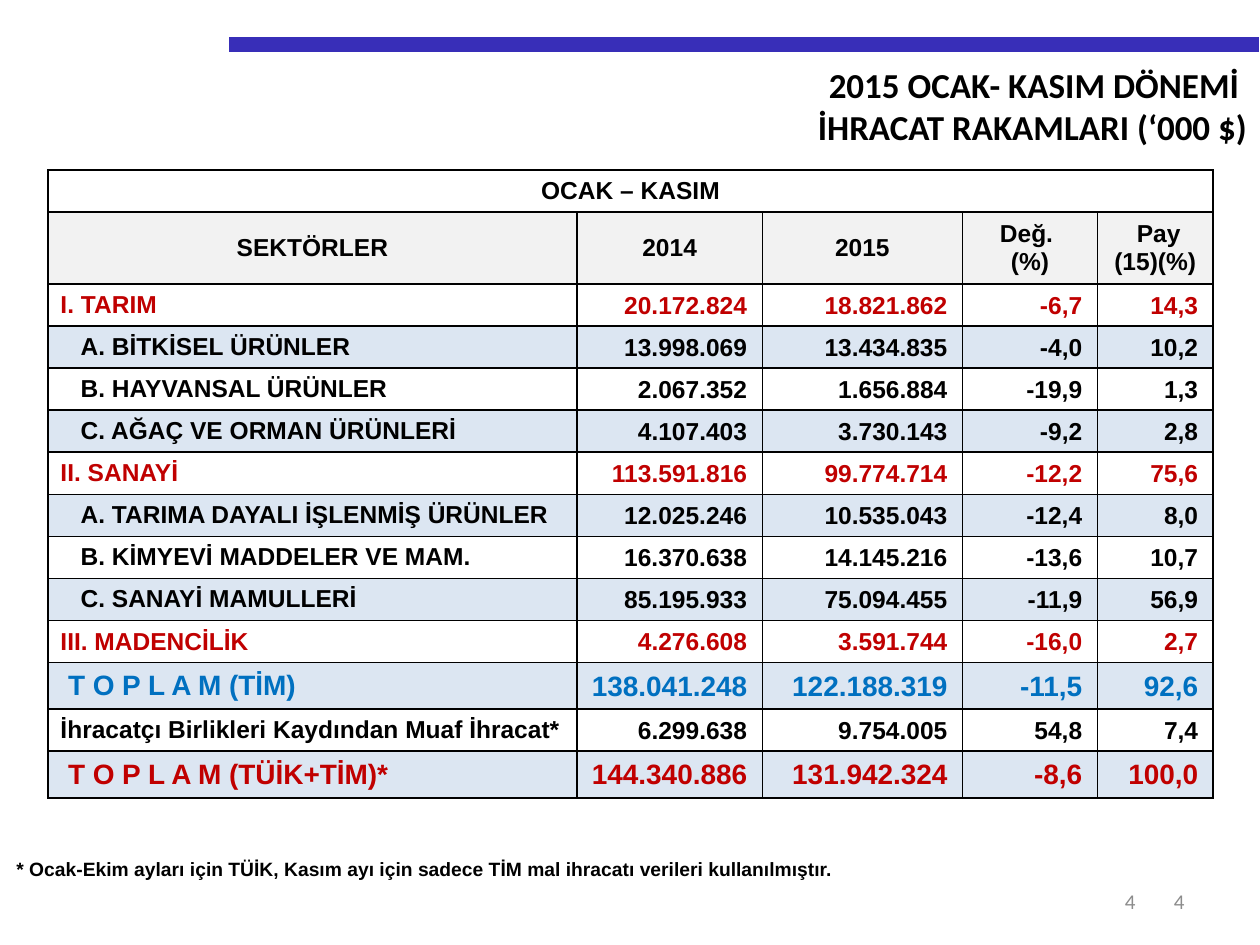
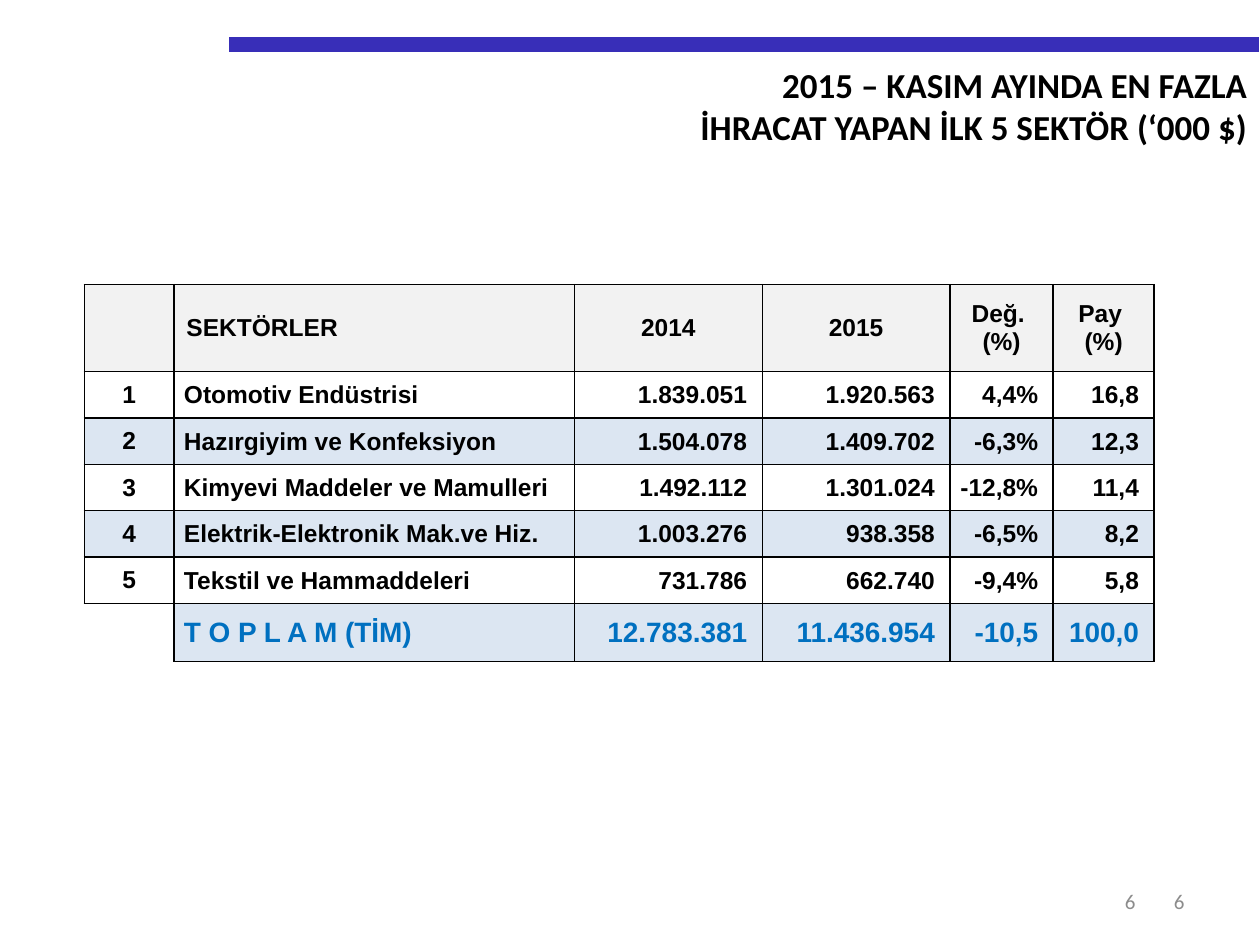
"""Builds two slides of Turkish export figures with a shared band, title and table style."""
from lxml import etree
from pptx import Presentation
from pptx.dml.color import RGBColor
from pptx.enum.shapes import MSO_CONNECTOR
from pptx.enum.text import MSO_ANCHOR, PP_ALIGN
from pptx.oxml.ns import qn
from pptx.util import Inches, Pt

LEFT, CENTER, RIGHT = PP_ALIGN.LEFT, PP_ALIGN.CENTER, PP_ALIGN.RIGHT
TOP, MIDDLE = MSO_ANCHOR.TOP, MSO_ANCHOR.MIDDLE
STRAIGHT = MSO_CONNECTOR.STRAIGHT
TITLE_ONLY = 5

BLACK, RED, BLUE, GRAY = "000000", "C00000", "0070C0", "8C8C8C"
BAND, HEADER_FILL, STRIPE_FILL = "382EB8", "F2F2F2", "DCE6F2"
HEADING_FONT, TABLE_FONT = "Calibri", "Arial"

ROW_STYLES = {
    "plain": (14, BLACK),
    "item": (14, BLACK),
    "section": (14, RED),
    "total": (16, BLUE),
    "grand": (16, RED),
}
NUMBER_INSETS = (0.01, 0.01, 0.12, 0)
DEFAULT_INSETS = (0.1, 0.05, 0.1, 0.05)
ALL_SIDES = "LRTB"

PERIOD_ROWS = [
    ("section", "I. TARIM", "20.172.824", "18.821.862", "-6,7", "14,3"),
    ("item", "A. BİTKİSEL ÜRÜNLER", "13.998.069", "13.434.835", "-4,0", "10,2"),
    ("item", "B. HAYVANSAL ÜRÜNLER", "2.067.352", "1.656.884", "-19,9", "1,3"),
    ("item", "C. AĞAÇ VE ORMAN ÜRÜNLERİ", "4.107.403", "3.730.143", "-9,2", "2,8"),
    ("section", "II. SANAYİ", "113.591.816", "99.774.714", "-12,2", "75,6"),
    ("item", "A. TARIMA DAYALI İŞLENMİŞ ÜRÜNLER", "12.025.246", "10.535.043", "-12,4", "8,0"),
    ("item", "B. KİMYEVİ MADDELER VE MAM.", "16.370.638", "14.145.216", "-13,6", "10,7"),
    ("item", "C. SANAYİ MAMULLERİ", "85.195.933", "75.094.455", "-11,9", "56,9"),
    ("section", "III. MADENCİLİK", "4.276.608", "3.591.744", "-16,0", "2,7"),
    ("total", "T O P L A M (TİM)", "138.041.248", "122.188.319", "-11,5", "92,6"),
    ("plain", "İhracatçı Birlikleri Kaydından Muaf İhracat*", "6.299.638", "9.754.005", "54,8", "7,4"),
    ("grand", "T O P L A M (TÜİK+TİM)*", "144.340.886", "131.942.324", "-8,6", "100,0"),
]
TOP_SECTOR_ROWS = [
    ("plain", "1", "Otomotiv Endüstrisi", "1.839.051", "1.920.563", "4,4%", "16,8"),
    ("plain", "2", "Hazırgiyim ve Konfeksiyon", "1.504.078", "1.409.702", "-6,3%", "12,3"),
    ("plain", "3", "Kimyevi Maddeler ve Mamulleri", "1.492.112", "1.301.024", "-12,8%", "11,4"),
    ("plain", "4", "Elektrik-Elektronik Mak.ve Hiz.", "1.003.276", "938.358", "-6,5%", "8,2"),
    ("plain", "5", "Tekstil ve Hammaddeleri", "731.786", "662.740", "-9,4%", "5,8"),
    ("total", "", "T O P L A M (TİM)", "12.783.381", "11.436.954", "-10,5", "100,0"),
]


def color(value):
    return RGBColor.from_string(value)


class Deck:
    """Holds the shared style and the current slide."""

    def __init__(self):
        self.presentation = Presentation()
        self.presentation.slide_width = Inches(10)
        self.presentation.slide_height = Inches(7.5)
        self.slide = None

    def add_slide(self, title_lines, page_number):
        layout = self.presentation.slide_layouts[TITLE_ONLY]
        self.slide = self.presentation.slides.add_slide(layout)
        self.band()
        self.title(title_lines)
        for left, width in ((7.17, 2.33), (7.01, 2.1)):
            self.page_number(page_number, left, width)

    def band(self):
        line = self.slide.shapes.add_connector(
            STRAIGHT, Inches(1.82), Inches(0.35), Inches(9.99), Inches(0.35))
        line.line.color.rgb = color(BAND)
        line.line.width = Pt(8.5)
        etree.SubElement(line._element.spPr, qn("a:effectLst"))

    def title(self, lines):
        title = self.slide.shapes.title
        title.left, title.top = Inches(1.06), Inches(0.45)
        title.width, title.height = Inches(8.94), Inches(0.77)
        title.text_frame.vertical_anchor = TOP
        self.set_text(title.text_frame, lines, RIGHT, HEADING_FONT, 20, BLACK, True)

    def page_number(self, number, left, width):
        box = self.slide.shapes.add_textbox(
            Inches(left), Inches(6.95), Inches(width), Inches(0.4))
        box.text_frame.word_wrap = True
        box.text_frame.vertical_anchor = MIDDLE
        self.set_text(box.text_frame, number, RIGHT, HEADING_FONT, 12, GRAY, False)

    def set_text(self, text_frame, text, align, font_name, size, font_color, bold):
        text_frame.text = text
        for paragraph in text_frame.paragraphs:
            paragraph.alignment = align
            font = paragraph.font
            font.name, font.size, font.bold = font_name, Pt(size), bold
            font.color.rgb = color(font_color)

    def grid(self, left, top, column_widths, row_heights):
        frame = self.slide.shapes.add_table(
            len(row_heights), len(column_widths), Inches(left), Inches(top),
            Inches(sum(column_widths)), Inches(sum(row_heights)))
        table = frame.table
        table.first_row = table.horz_banding = False
        for column, width in zip(table.columns, column_widths):
            column.width = Inches(width)
        for row, height in zip(table.rows, row_heights):
            row.height = Inches(height)
        return table

    def cell(self, cell, text, align=LEFT, size=14, font_color=BLACK, fill=None,
             insets=DEFAULT_INSETS, sides=ALL_SIDES):
        self.borders(cell, sides)
        if fill:
            cell.fill.solid()
            cell.fill.fore_color.rgb = color(fill)
        else:
            cell.fill.background()
        cell.vertical_anchor = MIDDLE
        (cell.margin_left, cell.margin_top,
         cell.margin_right, cell.margin_bottom) = map(Inches, insets)
        if text:
            self.set_text(cell.text_frame, text, align, TABLE_FONT, size, font_color, True)

    def borders(self, cell, sides):
        properties = cell._tc.get_or_add_tcPr()
        for side in ALL_SIDES:
            line = etree.SubElement(properties, qn(f"a:ln{side}"), w=str(Pt(1)))
            if side in sides:
                fill = etree.SubElement(line, qn("a:solidFill"))
                etree.SubElement(fill, qn("a:srgbClr"), val=BLACK)
            else:
                etree.SubElement(line, qn("a:noFill"))

    def header_row(self, table, row_index, labels, label_align=CENTER):
        for column, label in enumerate(labels):
            align = label_align if label == "SEKTÖRLER" else CENTER
            self.cell(table.cell(row_index, column), label, align, fill=HEADER_FILL)

    def body_rows(self, table, first_row, rows, label_column, label_insets, indents):
        left, *other_insets = label_insets
        for index, (style, *texts) in enumerate(rows):
            size, font_color = ROW_STYLES[style]
            fill = STRIPE_FILL if index % 2 else None
            for column, text in enumerate(texts):
                cell = table.cell(first_row + index, column)
                if column > label_column:
                    self.cell(cell, text, RIGHT, size, font_color, fill, NUMBER_INSETS)
                elif column == label_column:
                    insets = (left + indents.get(style, 0), *other_insets)
                    self.cell(cell, text, LEFT, size, font_color, fill, insets)
                elif text:
                    self.cell(cell, text, CENTER, size, font_color, fill)
                else:
                    self.cell(cell, text, sides="TR")


def build_period_slide(deck):
    deck.add_slide("2015 OCAK- KASIM DÖNEMİ \nİHRACAT RAKAMLARI (‘000 $)", "4")
    header, total = 0.57, 0.37
    body = (4.97 - header - 2 * total) / 11
    body_heights = [total if row[0] in ("total", "grand") else body for row in PERIOD_ROWS]
    table = deck.grid(0.38, 1.35, [4.2, 1.47, 1.59, 1.07, 0.92],
                      [body, header, *body_heights])
    for column in range(5):
        deck.cell(table.cell(0, column), "" if column else "OCAK – KASIM", CENTER)
    table.cell(0, 0).merge(table.cell(0, 4))
    deck.header_row(table, 1, ["SEKTÖRLER", "2014", "2015", "Değ. \n(%)", " Pay\n(15)(%)"])
    deck.body_rows(table, 2, PERIOD_ROWS, 0, DEFAULT_INSETS,
                   {"item": 0.16, "total": 0.06, "grand": 0.06})

    footnote = deck.grid(0.12, 6.74, [7.4], [0.31])
    deck.cell(footnote.cell(0, 0),
              "* Ocak-Ekim ayları için TÜİK, Kasım ayı için sadece TİM mal ihracatı "
              "verileri kullanılmıştır.",
              size=11, insets=(0.01, 0.01, 0.01, 0), sides="")


def build_top_sectors_slide(deck):
    deck.add_slide("2015 – KASIM AYINDA EN FAZLA\nİHRACAT YAPAN İLK 5 SEKTÖR (‘000 $)", "6")
    header, total = 0.69, 0.46
    body = (2.99 - header - total) / 5
    table = deck.grid(0.67, 2.26, [0.71, 3.18, 1.49, 1.49, 0.82, 0.8],
                      [header, *[body] * 5, total])
    deck.header_row(table, 0, ["", "SEKTÖRLER", "2014", "2015", "Değ. \n(%)", "Pay \n(%)"], LEFT)
    deck.body_rows(table, 1, TOP_SECTOR_ROWS, 1, (0.08, 0.01, 0.01, 0), {})


def main():
    deck = Deck()
    build_period_slide(deck)
    build_top_sectors_slide(deck)
    deck.presentation.save("out.pptx")


if __name__ == "__main__":
    main()
